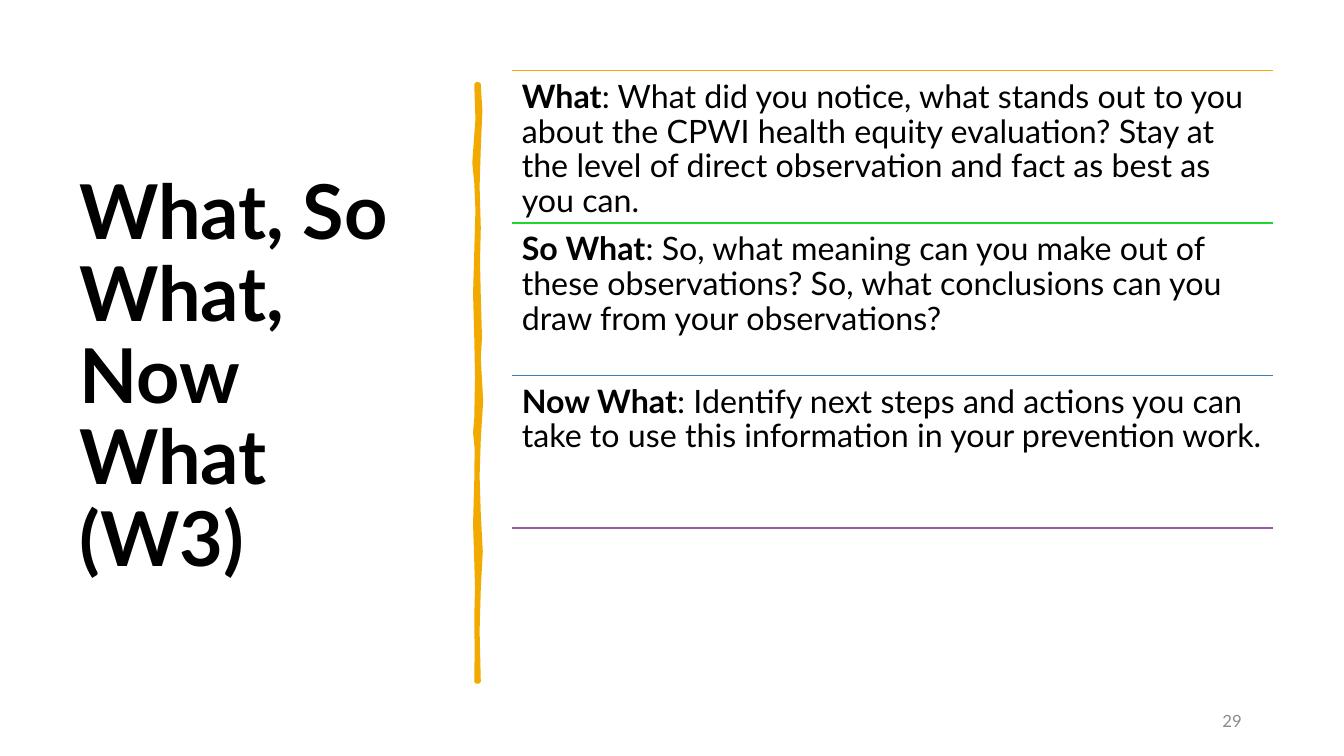
from lxml.etree import SubElement
from pptx import Presentation
from pptx.dml.color import RGBColor
from pptx.enum.shapes import MSO_CONNECTOR as Connector
from pptx.enum.text import MSO_ANCHOR as Anchor, MSO_AUTO_SIZE as AutoSize, PP_ALIGN as Align
from pptx.oxml.ns import qn
from pptx.util import Cm, Pt

COLORS = {"text": "000000", "muted": "8C8C8C", "gold": "F2A900",
          "green": "1ED62D", "blue": "3D80B9", "purple": "925D9C"}

QUESTIONS = [
    ("What", ": What did you notice, what stands out to you about the CPWI health equity "
             "evaluation? Stay at the level of direct observation and fact as best as you can."),
    ("So What", ": So, what meaning can you make out of these observations? "
                "So, what conclusions can you draw from your observations?"),
    ("Now What", ": Identify next steps and actions you can take to use this information "
                 "in your prevention work."),
]
RULE_COLORS = ["gold", "green", "blue", "purple"]
QUESTIONS_LEFT, QUESTIONS_TOP, QUESTIONS_WIDTH, ROW_HEIGHT = 12.9, 1.78, 19.18, 3.84

BRUSH_RIGHT_EDGE = [
    (12.06, 2.13), (12.1, 2.8), (12.06, 3.71), (12.03, 4.7), (12.06, 5.74), (12.04, 6.6),
    (12.06, 7.47), (12.09, 8.5), (12.06, 9.04), (12.12, 10.1), (12.06, 11.07), (12.03, 12),
    (12.06, 12.95), (12.11, 13.9), (12.06, 14.83), (12.03, 15.9), (12.06, 17.17)]
BRUSH_LEFT_EDGE = [
    (12.01, 2.13), (12.04, 3), (11.96, 4.1), (12.01, 4.6), (12.04, 5.3), (12.01, 6.35),
    (11.98, 7.4), (12.01, 8.51), (12.03, 9.5), (12.01, 10.54), (11.98, 10.9), (12.02, 11.3),
    (12.01, 12.12), (11.98, 13.2), (12.01, 14.15), (12.03, 14.8), (12.01, 15.57),
    (12.02, 16.4), (12.01, 17.17)]


def apply(target, values):
    """Set each named attribute on the target."""
    for name, value in values.items():
        setattr(target, name, value)


class SlideBuilder:
    """Holds the style and the slide being filled."""

    def __init__(self, slide, font="Lato"):
        """Keep the slide and its typeface."""
        self.slide = slide
        self.font = font

    def color(self, name):
        """Look up a palette colour."""
        return RGBColor.from_string(COLORS[name])

    def fill_text(self, shape, runs, size, color="text", frame=None, paragraph=None):
        """Put one paragraph of (text, bold) runs into a shape."""
        text_frame = shape.text_frame
        apply(text_frame, {"word_wrap": True, "auto_size": AutoSize.NONE, **(frame or {})})
        line = text_frame.paragraphs[0]
        apply(line, paragraph or {})
        for text, bold in runs:
            run = line.add_run()
            run.text = text
            apply(run.font, {"name": self.font, "size": Pt(size), "bold": bold})
            run.font.color.rgb = self.color(color)

    def title(self, text, left, top, width, height):
        """Move and fill the title placeholder."""
        title = self.slide.shapes.title
        apply(title, {"left": Cm(left), "top": Cm(top), "width": Cm(width), "height": Cm(height)})
        self.fill_text(title, [(text, True)], 54, frame={"vertical_anchor": Anchor.MIDDLE},
                       paragraph={"alignment": Align.LEFT, "line_spacing": 0.9})

    def text(self, box, runs, size, **formats):
        """Add a text box at left, top, width, height."""
        self.fill_text(self.slide.shapes.add_textbox(*map(Cm, box)), runs, size, **formats)

    def rule(self, left, top, width, color):
        """Add a thin horizontal line."""
        rule = self.slide.shapes.add_connector(
            Connector.STRAIGHT, Cm(left), Cm(top), Cm(left + width), Cm(top))
        rule.line.color.rgb = self.color(color)
        rule.line.width = Pt(1)
        SubElement(rule._element.spPr, qn("a:effectLst"))

    def brush_stroke(self, outline, color):
        """Add a closed hand-drawn stroke through the outline points."""
        start, *rest = [(Cm(x), Cm(y)) for x, y in outline]
        builder = self.slide.shapes.build_freeform(*start)
        builder.add_line_segments(rest, close=True)
        stroke = builder.convert_to_shape()
        stroke.shadow.inherit = False
        stroke.fill.solid()
        stroke.fill.fore_color.rgb = stroke.line.color.rgb = self.color(color)
        stroke.line.width = Pt(3.25)
        SubElement(stroke._element.spPr.find(qn("a:ln")), qn("a:round"))


def main():
    """Build and save the slide."""
    deck = Presentation()
    apply(deck, {"slide_width": Cm(33.87), "slide_height": Cm(19.05)})
    page = SlideBuilder(deck.slides.add_slide(deck.slide_layouts[5]))

    page.title("What, So What, Now What (W3)", 1.75, 1.78, 9.5, 15.52)
    page.brush_stroke(BRUSH_RIGHT_EDGE + BRUSH_LEFT_EDGE[::-1], "gold")
    page.text((23.93, 17.65, 7.62, 1.02), [("29", False)], 12, color="muted",
              frame={"vertical_anchor": Anchor.MIDDLE}, paragraph={"alignment": Align.RIGHT})

    for row, rule_color in enumerate(RULE_COLORS):
        page.rule(QUESTIONS_LEFT, QUESTIONS_TOP + row * ROW_HEIGHT, QUESTIONS_WIDTH, rule_color)
    margins = {f"margin_{side}": Cm(0.25) for side in ("left", "top", "right", "bottom")}
    for row, (label, question) in enumerate(QUESTIONS):
        page.text((QUESTIONS_LEFT, QUESTIONS_TOP + row * ROW_HEIGHT, QUESTIONS_WIDTH, ROW_HEIGHT),
                  [(label, True), (question, False)], 23, frame=margins,
                  paragraph={"line_spacing": 0.9})

    deck.save("out.pptx")


if __name__ == "__main__":
    main()
